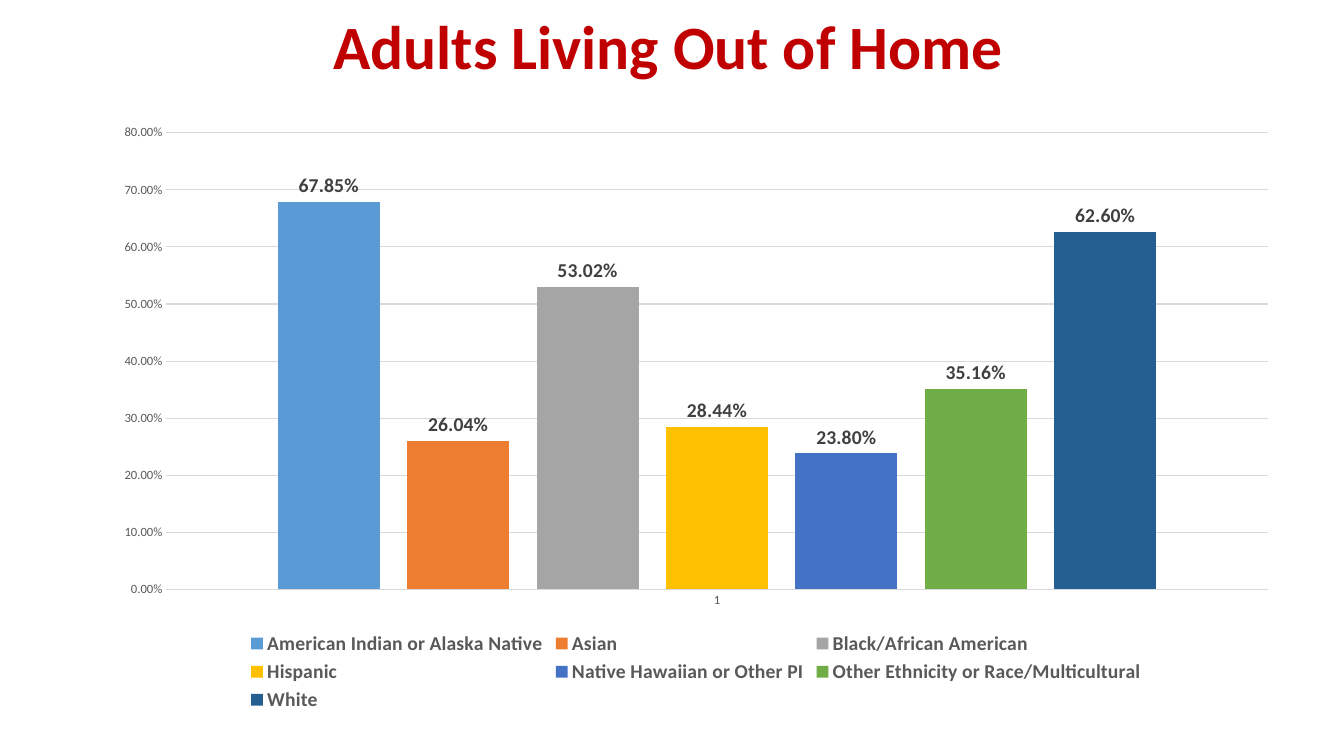
"""Build a slide charting the share of adults living out of home by ethnicity."""
import pptx
import pptx.chart.data
import pptx.dml.color
import pptx.enum.chart
import pptx.enum.text
import pptx.util

TITLE = "Adults Living Out of Home"
SHARES = [
    ("American Indian or Alaska Native", 0.6785, "5B9BD5"),
    ("Asian", 0.2604, "ED7D31"),
    ("Black/African American", 0.5302, "A5A5A5"),
    ("Hispanic", 0.2844, "FFC000"),
    ("Native Hawaiian or Other PI", 0.238, "4472C4"),
    ("Other Ethnicity or Race/Multicultural", 0.3516, "70AD47"),
    ("White", 0.626, "255E91"),
]


def paint(color_format, color):
    color_format.rgb = pptx.dml.color.RGBColor.from_string(color)


class Deck:
    """Hold the style and the current page."""

    family = "Calibri"
    accent = "C00000"
    grey = "595959"
    dark = "404040"
    rule = "D9D9D9"
    percent = "0.00%"

    def __init__(self, width, height):
        self.deck = pptx.Presentation()
        self.deck.slide_width = pptx.util.Inches(width)
        self.deck.slide_height = pptx.util.Inches(height)
        self.page = self.deck.slides.add_slide(self.deck.slide_layouts[5])

    def area(self, left, top, width, height):
        across, down = self.deck.slide_width, self.deck.slide_height
        return (round(left * across), round(top * down),
                round(width * across), round(height * down))

    def style(self, font, size, color, bold=False):
        font.name = self.family
        font.size = pptx.util.Pt(size)
        font.bold = bold
        paint(font.color, color)

    def line(self, line_format):
        paint(line_format.color, self.rule)
        line_format.width = pptx.util.Pt(0.75)

    def title(self, text, *shares):
        box = self.page.shapes.title
        box.left, box.top, box.width, box.height = self.area(*shares)
        box.text_frame.text = text
        box.text_frame.vertical_anchor = pptx.enum.text.MSO_ANCHOR.MIDDLE
        para = box.text_frame.paragraphs[0]
        para.alignment = pptx.enum.text.PP_ALIGN.CENTER
        para.line_spacing = 0.9
        self.style(para.font, 44, self.accent, bold=True)

    def axis(self, axis):
        axis.major_tick_mark = pptx.enum.chart.XL_TICK_MARK.NONE
        axis.minor_tick_mark = pptx.enum.chart.XL_TICK_MARK.NONE
        self.style(axis.tick_labels.font, 9, self.grey)

    def bars(self, series, color):
        series.format.fill.solid()
        paint(series.format.fill.fore_color, color)
        labels = series.data_labels
        labels.show_value = True
        labels.position = pptx.enum.chart.XL_LABEL_POSITION.OUTSIDE_END
        labels.number_format = self.percent
        labels.number_format_is_linked = False
        self.style(labels.font, 14, self.dark, bold=True)

    def column_chart(self, rows, *shares):
        data = pptx.chart.data.CategoryChartData(number_format=self.percent)
        data.categories = ["1"]
        for name, value, _ in rows:
            data.add_series(name, [value])
        kind = pptx.enum.chart.XL_CHART_TYPE.COLUMN_CLUSTERED
        chart = self.page.shapes.add_chart(kind, *self.area(*shares), data).chart
        self.style(chart.font, 10, "000000")
        chart.has_title = False

        plot = chart.plots[0]
        plot.gap_width = 219
        plot.overlap = -27
        plot.vary_by_categories = False
        for series, (_, _, color) in zip(plot.series, rows):
            self.bars(series, color)

        self.axis(chart.category_axis)
        self.line(chart.category_axis.format.line)
        value_axis = chart.value_axis
        self.axis(value_axis)
        value_axis.format.line.fill.background()
        value_axis.has_major_gridlines = True
        self.line(value_axis.major_gridlines.format.line)
        value_axis.tick_labels.number_format = self.percent
        value_axis.tick_labels.number_format_is_linked = False

        chart.has_legend = True
        chart.legend.position = pptx.enum.chart.XL_LEGEND_POSITION.BOTTOM
        chart.legend.include_in_layout = False
        self.style(chart.legend.font, 14, self.grey, bold=True)


def main():
    deck = Deck(13.33, 7.5)
    deck.title(TITLE, 0.066, 0, 0.863, 0.13)
    deck.column_chart(SHARES, 0.075, 0.15, 0.886, 0.797)
    deck.deck.save("out.pptx")


if __name__ == "__main__":
    main()
